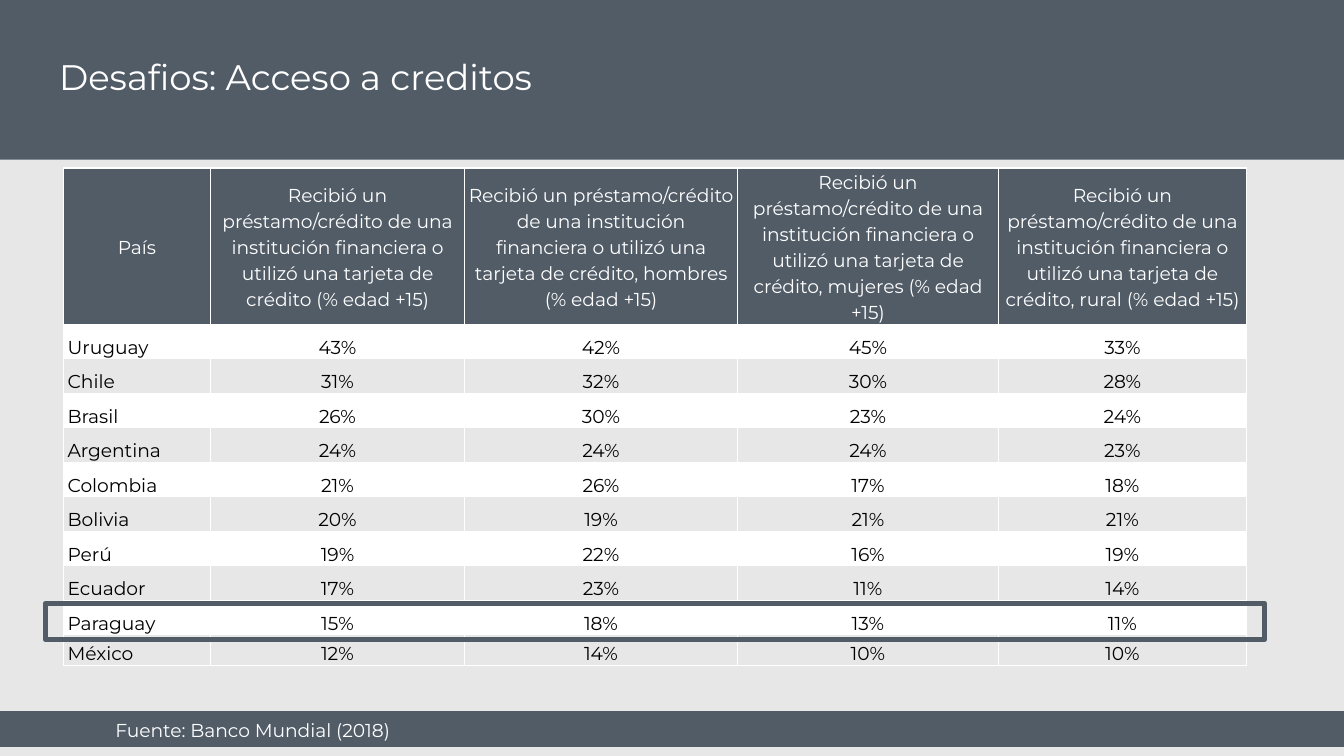
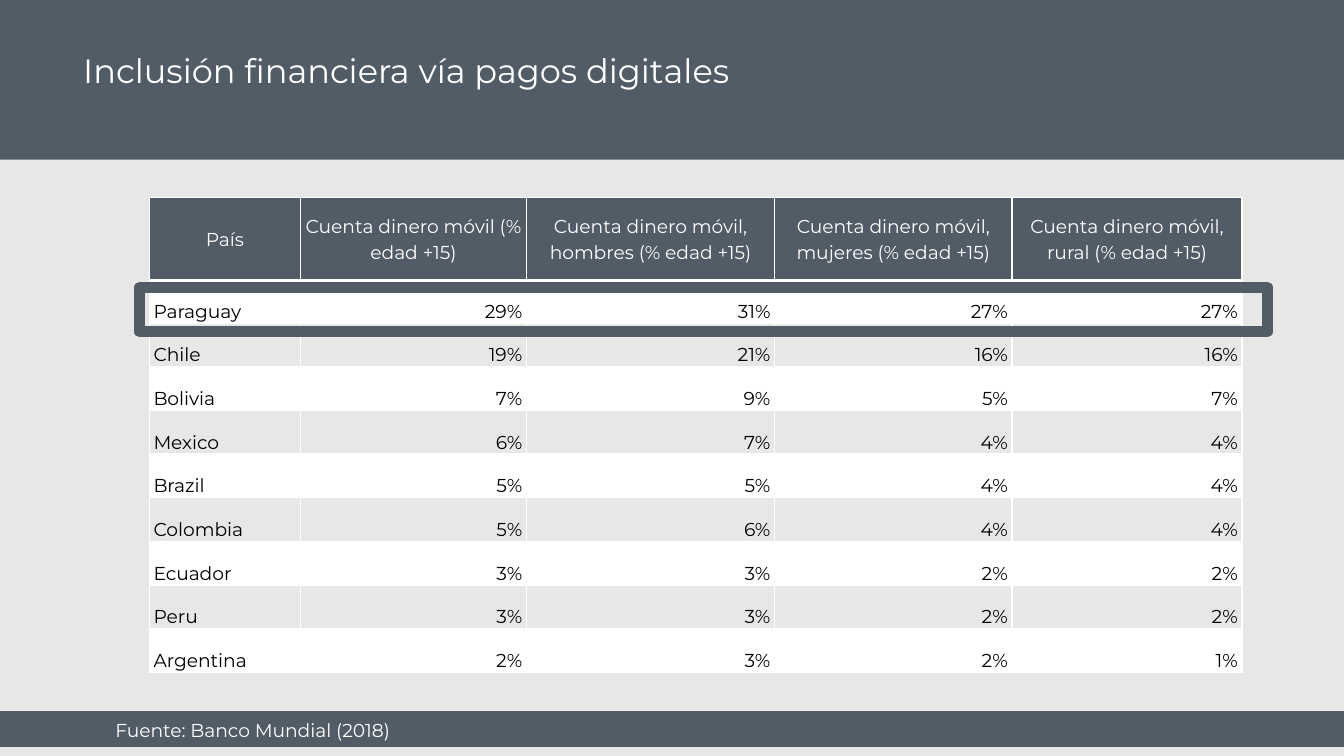
from dataclasses import dataclass

import pptx
import pptx.dml.color
import pptx.enum.shapes
import pptx.enum.text
import pptx.oxml.ns
import pptx.shapes.autoshape
import pptx.slide
import pptx.text.text
import pptx.util
from lxml import etree

Pt = pptx.util.Pt
Align = pptx.enum.text.PP_ALIGN
Anchor = pptx.enum.text.MSO_ANCHOR

# Shared look
FONT = "Montserrat"
SLATE, PALE, WHITE, BLACK = "515C67", "E7E7E8", "FFFFFF", "000000"
SOURCE = "Fuente: Banco Mundial (2018)"
GROUPS = ("", ", hombres", ", mujeres", ", rural")


@dataclass
class Box:
    left: float
    top: float
    width: float
    height: float

    def pts(self) -> tuple:
        return tuple(Pt(n) for n in (self.left, self.top, self.width, self.height))


@dataclass
class Grid:
    left: float
    top: float
    cols: list[float]
    head: float
    row: float
    last: float
    topic: str
    align: Align
    data: list[tuple]


@dataclass
class Page:
    title: str
    size: float
    place: Box
    grid: Grid
    mark: Box
    weight: float


BANDS = (Box(0, 381, 720, 19.2), Box(0, -5, 720, 90.5))
NOTE = Box(54.7, 376, 464.4, 19.4)

PAGES = [
    Page(
        "Desafios: Acceso a creditos", 19, Box(24.5, 22.3, 682.5, 67.7),
        Grid(
            34, 90, [78.75, 136.1, 146.25, 139.8, 132.85], 73.5, 18.5, 16.5,
            "Recibió un préstamo/crédito de una institución financiera "
            "o utilizó una tarjeta de crédito",
            Align.CENTER,
            [
                ("Uruguay", 43, 42, 45, 33),
                ("Chile", 31, 32, 30, 28),
                ("Brasil", 26, 30, 23, 24),
                ("Argentina", 24, 24, 24, 23),
                ("Colombia", 21, 26, 17, 18),
                ("Bolivia", 20, 19, 21, 21),
                ("Perú", 19, 22, 16, 19),
                ("Ecuador", 17, 23, 11, 14),
                ("Paraguay", 15, 18, 13, 11),
                ("México", 12, 14, 10, 10),
            ],
        ),
        Box(24.5, 323.3, 653, 19.4), 3,
    ),
    Page(
        "Inclusión financiera vía pagos digitales", 18, Box(37.4, 19.4, 671, 41.8),
        Grid(
            80, 105.8, [81, 121, 133, 127.2, 123.2], 43.9, 23.4, 23.4,
            "Cuenta dinero móvil",
            Align.RIGHT,
            [
                ("Paraguay", 29, 31, 27, 27),
                ("Chile", 19, 21, 16, 16),
                ("Bolivia", 7, 9, 5, 7),
                ("Mexico", 6, 7, 4, 4),
                ("Brazil", 5, 5, 4, 4),
                ("Colombia", 5, 6, 4, 4),
                ("Ecuador", 3, 3, 2, 2),
                ("Peru", 3, 3, 2, 2),
                ("Argentina", 2, 3, 2, 1),
            ],
        ),
        Box(74.9, 154, 604, 23.8), 6,
    ),
]


def hue(code: str) -> pptx.dml.color.RGBColor:
    return pptx.dml.color.RGBColor.from_string(code)


def write(frame: pptx.text.text.TextFrame, text: str, *, size: float = 10,
          color: str = WHITE, align: Align = Align.LEFT,
          lead: float = 1.15, after: float = 0) -> None:
    para = frame.paragraphs[0]
    para.alignment = align
    para.line_spacing = lead
    para.space_before, para.space_after = Pt(0), Pt(after)
    run = para.add_run()
    run.text = text
    run.font.name, run.font.size = FONT, Pt(size)
    run.font.color.rgb = hue(color)


def inset(frame: pptx.text.text.TextFrame) -> None:
    frame.word_wrap = True
    frame.auto_size = pptx.enum.text.MSO_AUTO_SIZE.NONE
    frame.vertical_anchor = Anchor.TOP
    frame.margin_left = frame.margin_right = Pt(7.2)
    frame.margin_top = frame.margin_bottom = Pt(7.2)


def rect(slide: pptx.slide.Slide, box: Box) -> pptx.shapes.autoshape.Shape:
    shape = slide.shapes.add_shape(
        pptx.enum.shapes.MSO_SHAPE.RECTANGLE, *box.pts())
    shape.shadow.inherit = False
    return shape


def frame_row(slide: pptx.slide.Slide, box: Box, weight: float) -> None:
    shape = rect(slide, box)
    shape.fill.background()
    shape.line.color.rgb = hue(SLATE)
    shape.line.width = Pt(weight)
    # Rounded corners on the outline
    line = shape.element.find(".//" + pptx.oxml.ns.qn("a:ln"))
    etree.SubElement(line, pptx.oxml.ns.qn("a:round"))


def edge(cell) -> None:
    """Thin white border on all four sides."""
    qn = pptx.oxml.ns.qn
    props = cell._tc.get_or_add_tcPr()
    for side in "LRTB":
        line = etree.SubElement(props, qn(f"a:ln{side}"), w=str(Pt(0.75)))
        fill = etree.SubElement(line, qn("a:solidFill"))
        etree.SubElement(fill, qn("a:srgbClr"), val=WHITE)


def draw_grid(slide: pptx.slide.Slide, grid: Grid) -> None:
    heads = ["País"] + [f"{grid.topic}{group} (% edad +15)" for group in GROUPS]
    rows = [heads] + [[name] + [f"{n}%" for n in nums] for name, *nums in grid.data]
    highs = [grid.head] + [grid.row] * (len(grid.data) - 1) + [grid.last]
    box = Box(grid.left, grid.top, sum(grid.cols), sum(highs))
    table = slide.shapes.add_table(len(rows), len(heads), *box.pts()).table
    table.first_row = table.horz_banding = False
    for col, width in zip(table.columns, grid.cols):
        col.width = Pt(width)
    for i, (texts, high) in enumerate(zip(rows, highs)):
        table.rows[i].height = Pt(high)
        for j, text in enumerate(texts):
            cell = table.cell(i, j)
            cell.margin_left = cell.margin_right = Pt(2.25)
            cell.margin_top = cell.margin_bottom = Pt(0)
            cell.vertical_anchor = Anchor.BOTTOM if i else Anchor.MIDDLE
            edge(cell)
            if i and i % 2 == 0:
                cell.fill.background()
            else:
                cell.fill.solid()
                cell.fill.fore_color.rgb = hue(WHITE if i else SLATE)
            align = Align.CENTER if i == 0 else grid.align if j else Align.LEFT
            write(cell.text_frame, text, color=BLACK if i else WHITE, align=align)


def draw_page(deck, page: Page) -> None:
    slide = deck.slides.add_slide(deck.slide_layouts[5])

    # Bands
    for box in BANDS:
        band = rect(slide, box)
        band.fill.solid()
        band.fill.fore_color.rgb = hue(SLATE)
        band.line.fill.background()

    # Title, raised above the bands
    title = slide.shapes.title
    title.element.getparent().append(title.element)
    title.left, title.top, title.width, title.height = page.place.pts()
    inset(title.text_frame)
    write(title.text_frame, page.title, size=page.size, lead=1.0)

    # Table and highlighted row
    draw_grid(slide, page.grid)
    frame_row(slide, page.mark, page.weight)

    # Source note
    note = slide.shapes.add_textbox(*NOTE.pts()).text_frame
    inset(note)
    write(note, SOURCE, after=16)


def main() -> None:
    deck = pptx.Presentation()
    deck.slide_width, deck.slide_height = Pt(720), Pt(405)
    back = deck.slide_master.background.fill
    back.solid()
    back.fore_color.rgb = hue(PALE)
    for page in PAGES:
        draw_page(deck, page)
    deck.save("out.pptx")


if __name__ == "__main__":
    main()
